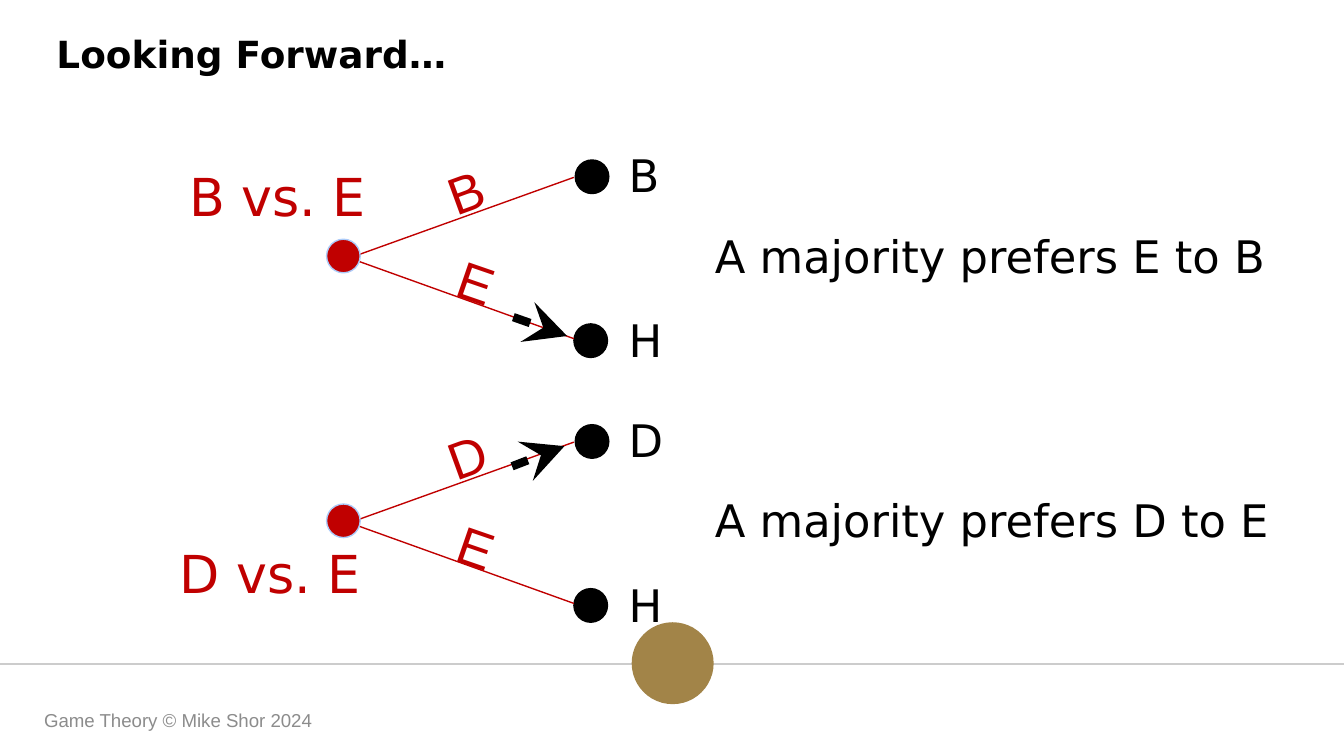
from dataclasses import dataclass

from lxml import etree
from pptx import Presentation
from pptx import util as u
from pptx.dml.color import RGBColor
from pptx.enum import shapes, text
from pptx.oxml import ns

RED, BLACK, GRAY = "C00000", "000000", "8C8C8C"
WIDE = "DejaVu Sans"
PAGE_WIDTH = 10
PAGE_HEIGHT = PAGE_WIDTH * 9 / 16
TREE_PITCH = 1.97


@dataclass
class Label:
    words: str
    left: float
    top: float
    width: float
    height: float
    size: int = 24
    color: str = BLACK
    font: str = WIDE
    bold: bool = False
    align: text.PP_ALIGN = text.PP_ALIGN.LEFT
    anchor: text.MSO_ANCHOR = text.MSO_ANCHOR.TOP
    rotation: float = 0
    margin_left: float = 0.1


@dataclass
class Line:
    start: tuple[float, float]
    end: tuple[float, float]
    color: str = RED
    width: float = 0.75
    arrow: bool = False


@dataclass
class Dot:
    left: float
    top: float
    size: float = 0.25
    fill: str = BLACK
    outline: str | None = BLACK


@dataclass
class Tree:
    root: Label
    upper: tuple[str, str]
    lower: tuple[str, str]
    verdict: str
    arrow: Line


def rgb(color: str) -> RGBColor:
    return RGBColor.from_string(color)


def apply(target, values: dict) -> None:
    for name, value in values.items():
        setattr(target, name, value)


def write(box, label: Label) -> None:
    apply(box, {
        "left": u.Inches(label.left),
        "top": u.Inches(label.top),
        "width": u.Inches(label.width),
        "height": u.Inches(label.height),
        "rotation": label.rotation,
    })
    frame = box.text_frame
    apply(frame, {
        "word_wrap": True,
        "auto_size": text.MSO_AUTO_SIZE.NONE,
        "vertical_anchor": label.anchor,
        "margin_left": u.Inches(label.margin_left),
    })
    para = frame.paragraphs[0]
    para.alignment = label.align
    span = para.add_run()
    span.text = label.words
    apply(span.font, {"name": label.font, "size": u.Pt(label.size), "bold": label.bold})
    span.font.color.rgb = rgb(label.color)


def add_label(page, label: Label) -> None:
    write(page.shapes.add_textbox(0, 0, 0, 0), label)


def add_line(page, line: Line) -> None:
    ends = [u.Inches(value) for value in (*line.start, *line.end)]
    connector = page.shapes.add_connector(shapes.MSO_CONNECTOR.STRAIGHT, *ends)
    connector.line.color.rgb = rgb(line.color)
    connector.line.width = u.Pt(line.width)
    properties = connector._element.spPr
    if line.arrow:
        outline = properties.find(ns.qn("a:ln"))
        etree.SubElement(outline, ns.qn("a:tailEnd"), type="stealth", w="lg", len="lg")
    etree.SubElement(properties, ns.qn("a:effectLst"))


def add_dot(page, dot: Dot) -> None:
    area = [u.Inches(value) for value in (dot.left, dot.top, dot.size, dot.size)]
    circle = page.shapes.add_shape(shapes.MSO_SHAPE.OVAL, *area)
    circle.shadow.inherit = False
    circle.fill.solid()
    circle.fill.fore_color.rgb = rgb(dot.fill)
    if dot.outline:
        circle.line.color.rgb = rgb(dot.outline)
        circle.line.width = u.Pt(0.75)
    else:
        circle.line.fill.background()


def add_tree(page, tree: Tree, shift: float) -> None:
    branch_style = {"size": 28, "color": RED, "font": "Arial", "margin_left": 0.42}
    upper_branch, upper_leaf = tree.upper
    lower_branch, lower_leaf = tree.lower
    root = (2.6, 1.92 + shift)
    for label in (
        tree.root,
        Label(upper_leaf, 4.58, 1.05 + shift, 0.64, 0.5),
        Label(lower_leaf, 4.58, 2.28 + shift, 0.64, 0.5),
        Label(upper_branch, 2.91, 1.11 + shift, 1.28, 0.57, rotation=340, **branch_style),
        Label(lower_branch, 3, 1.81 + shift, 1.1, 0.57, rotation=19, **branch_style),
        Label(tree.verdict, 5.22, 1.65 + shift, 4.58, 0.5),
    ):
        add_label(page, label)
    add_dot(page, Dot(4.28, 1.19 + shift))
    add_dot(page, Dot(4.27, 2.41 + shift))
    for leaf_top in (1.32, 2.52):
        add_line(page, Line(root, (4.27, leaf_top + shift)))
    add_dot(page, Dot(2.43, 1.78 + shift, fill=RED, outline="ACCBF9"))
    add_line(page, tree.arrow)


def main() -> None:
    deck = Presentation()
    apply(deck, {"slide_width": u.Inches(PAGE_WIDTH), "slide_height": u.Inches(PAGE_HEIGHT)})
    page = deck.slides.add_slide(deck.slide_layouts[5])

    add_line(page, Line((0, 4.94), (PAGE_WIDTH, 4.94), "CCCCCC"))
    add_dot(page, Dot(4.7, 4.63, 0.61, "A28448", None))
    write(page.shapes.title, Label("Looking Forward…", 0.32, 0.18, 5, 0.44, 20, bold=True))

    trees = [
        Tree(
            Label("B vs. E", 1.18, 1.17, 1.64, 0.57, 28, RED, align=text.PP_ALIGN.RIGHT),
            ("B", "B"), ("E", "H"), "A majority prefers E to B",
            Line((3.82, 2.36), (4.22, 2.5), BLACK, 4.5, True),
        ),
        Tree(
            Label("D vs. E", 1.24, 3.98, 1.73, 0.57, 28, RED),
            ("D", "D"), ("E", "H"), "A majority prefers D to E",
            Line((3.81, 3.47), (4.2, 3.32), BLACK, 4.5, True),
        ),
    ]
    for index, tree in enumerate(trees):
        add_tree(page, tree, index * TREE_PITCH)

    add_label(page, Label("Game Theory © Mike Shor 2024", 0.23, 5.21, 3.38, 0.3, 10, GRAY,
                          "Arial", anchor=text.MSO_ANCHOR.MIDDLE))
    deck.save("out.pptx")


if __name__ == "__main__":
    main()
